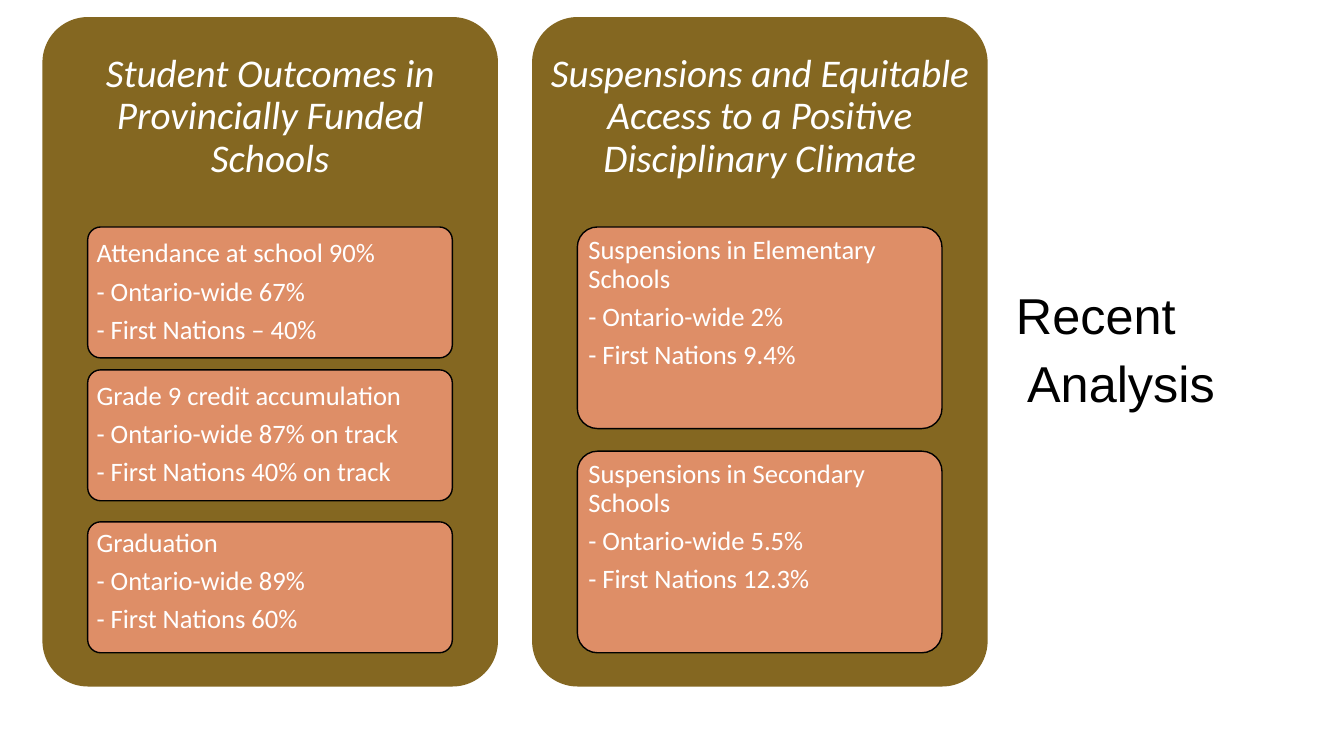
from pptx import Presentation
from pptx.dml.color import RGBColor
from pptx.enum.shapes import MSO_SHAPE
from pptx.enum.text import MSO_ANCHOR, MSO_AUTO_SIZE, PP_ALIGN
from pptx.oxml.ns import qn
from pptx.util import Cm, Pt


def color(code):
    return RGBColor.from_string(code)


class SlideBuilder:
    olive, coral, white, black = "846721", "DE8E67", "FFFFFF", "000000"

    def __init__(self, slide):
        self.slide = slide

    def format_text(self, frame, lines, size, font, code, align=PP_ALIGN.LEFT,
                    before=0, after=0, italic=False):
        frame.word_wrap = True
        frame.auto_size = MSO_AUTO_SIZE.NONE
        frame.text = "\n".join(lines)
        for index, para in enumerate(frame.paragraphs):
            para.alignment = align
            para.line_spacing = 0.9
            para.space_before = Pt(before if index else 0)
            para.space_after = Pt(after)
            for span in para.runs:
                span.font.size = Pt(size)
                span.font.name = font
                span.font.italic = italic
                span.font.color.rgb = color(code)

    def set_margins(self, frame, side, end):
        frame.margin_left = frame.margin_right = Cm(side)
        frame.margin_top = frame.margin_bottom = Cm(end)

    def rounded_box(self, left, top, width, height, fill):
        box = self.slide.shapes.add_shape(
            MSO_SHAPE.ROUNDED_RECTANGLE, Cm(left), Cm(top), Cm(width), Cm(height))
        box.adjustments[0] = 0.1
        box.shadow.inherit = False
        box.fill.solid()
        box.fill.fore_color.rgb = color(fill)
        return box

    def panel(self, left, heading):
        box = self.rounded_box(left, 0.43, 11.48, 16.87, self.olive)
        box.line.fill.background()
        title = self.slide.shapes.add_textbox(Cm(left), Cm(0.43), Cm(11.48), Cm(5.05))
        frame = title.text_frame
        self.set_margins(frame, 0.3, 0.3)
        frame.vertical_anchor = MSO_ANCHOR.MIDDLE
        self.format_text(frame, [heading], 28, "Calibri", self.white,
                         PP_ALIGN.CENTER, after=9.8, italic=True)

    def card(self, left, top, height, anchor, lines):
        box = self.rounded_box(left, top, 9.19, height, self.coral)
        box.line.color.rgb = color(self.black)
        box.line.width = Pt(1)
        frame = box.text_frame
        self.set_margins(frame, 0.13, 0.1)
        frame.vertical_anchor = anchor
        self.format_text(frame, lines, 19, "Calibri", self.white, after=6.65)

    def side_text(self, lines):
        body = self.slide.placeholders[1]
        body.left, body.top, body.width, body.height = Cm(25.35), Cm(5.92), Cm(7.19), Cm(5.92)
        frame = body.text_frame
        frame.vertical_anchor = MSO_ANCHOR.MIDDLE
        self.format_text(frame, lines, 36, "Arial", self.black, before=10)
        for para in frame.paragraphs:
            properties = para._p.get_or_add_pPr()
            properties.set("marL", "0")
            properties.set("indent", "0")
            properties.append(properties.makeelement(qn("a:buNone"), {}))


# Columns: heading, card height, then each card's top, anchor and lines
MIDDLE, TOP = MSO_ANCHOR.MIDDLE, MSO_ANCHOR.TOP
COLUMNS = [
    ("Student Outcomes in Provincially Funded Schools", 3.3, [
        (5.72, MIDDLE, ["Attendance at school 90%", "- Ontario-wide 67%",
                        "- First Nations – 40%"]),
        (9.32, MIDDLE, ["Grade 9 credit accumulation", "- Ontario-wide 87% on track",
                        "- First Nations 40% on track"]),
        (13.15, TOP, ["Graduation", "- Ontario-wide 89%", "- First Nations 60%"]),
    ]),
    ("Suspensions and Equitable Access to a Positive Disciplinary Climate", 5.08, [
        (5.72, TOP, ["Suspensions in Elementary Schools", "- Ontario-wide 2%",
                     "- First Nations 9.4%"]),
        (11.37, TOP, ["Suspensions in Secondary Schools", "- Ontario-wide 5.5%",
                      "- First Nations 12.3%"]),
    ]),
]


def main():
    deck = Presentation()
    deck.slide_width, deck.slide_height = Cm(33.87), Cm(19.05)
    page = deck.slides.add_slide(deck.slide_layouts[1])
    title = page.shapes.title._element
    title.getparent().remove(title)
    builder = SlideBuilder(page)

    # Label on the right
    builder.side_text(["Recent", " Analysis"])

    # Two panels with their cards
    for index, (heading, height, cards) in enumerate(COLUMNS):
        left = 1.07 + index * 12.34
        builder.panel(left, heading)
        for top, anchor, lines in cards:
            builder.card(left + 1.14, top, height, anchor, lines)

    deck.save("out.pptx")


if __name__ == "__main__":
    main()
